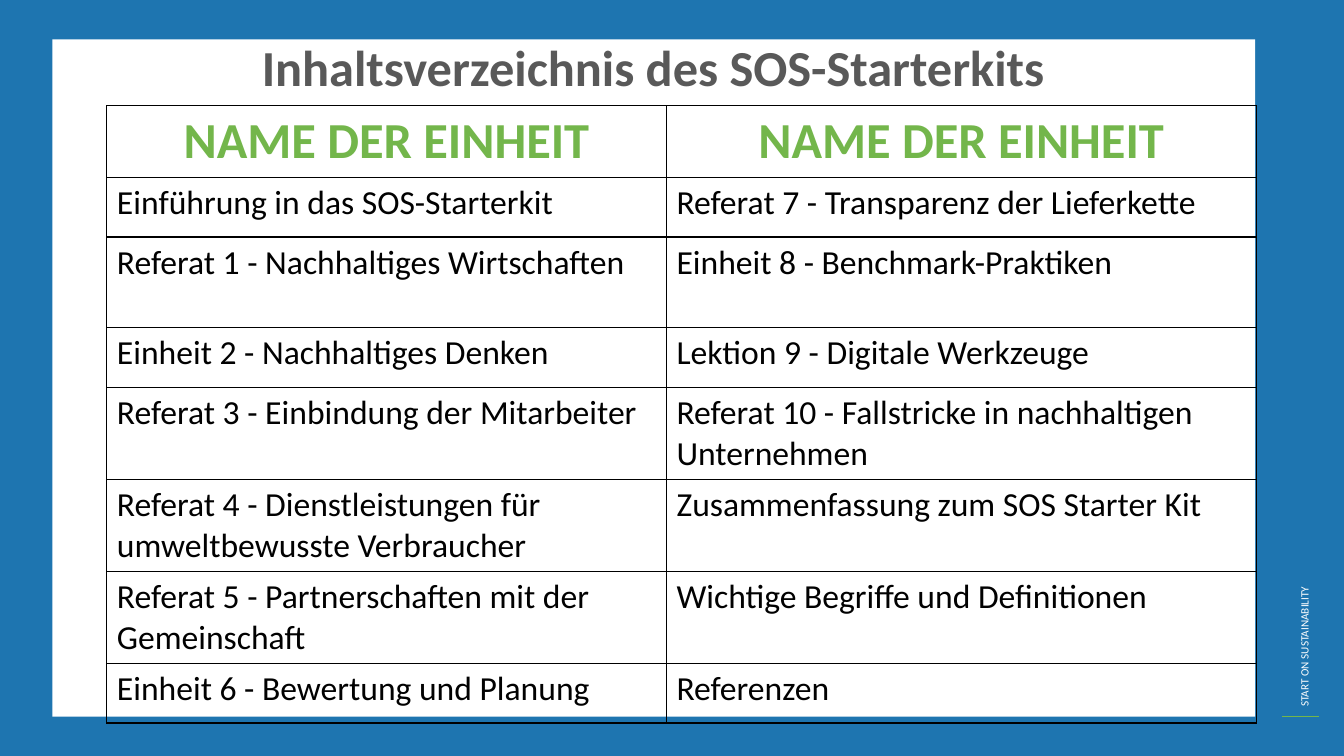
import pptx
import pptx.dml.color
import pptx.enum.shapes
import pptx.enum.text
import pptx.oxml
import pptx.oxml.ns
import pptx.util
from pptx.util import Inches

BLUE, GREEN, WHITE, GREY, BLACK = "1E75B0", "73B64B", "FFFFFF", "595959", "010101"
CENTER = pptx.enum.text.PP_ALIGN.CENTER
LEFT = pptx.enum.text.PP_ALIGN.LEFT

UNITS = [
    ("NAME DER EINHEIT", "NAME DER EINHEIT"),
    ("Einführung in das SOS-Starterkit", "Referat 7 - Transparenz der Lieferkette"),
    ("Referat 1 - Nachhaltiges Wirtschaften", "Einheit 8 - Benchmark-Praktiken"),
    ("Einheit 2 - Nachhaltiges Denken", "Lektion 9 - Digitale Werkzeuge"),
    ("Referat 3 - Einbindung der Mitarbeiter",
     "Referat 10 - Fallstricke in nachhaltigen Unternehmen"),
    ("Referat 4 - Dienstleistungen für umweltbewusste Verbraucher",
     "Zusammenfassung zum SOS Starter Kit"),
    ("Referat 5 - Partnerschaften mit der Gemeinschaft",
     "Wichtige Begriffe und Definitionen"),
    ("Einheit 6 - Bewertung und Planung", "Referenzen"),
]
COL_WIDTHS = [5.55, 5.85]
ROW_HEIGHTS = [0.71, 0.59, 0.9, 0.59, 0.91, 0.91, 0.91, 0.59]


def rgb(value):
    return pptx.dml.color.RGBColor.from_string(value)


class Deck:
    """Holds the font and the current slide."""

    def __init__(self, prs, font="Calibri"):
        self.font = font
        self.s = prs.slides.add_slide(prs.slide_layouts[5])

    def set_text(self, tf, text, size, color, bold=False, align=LEFT):
        tf.text = text
        p = tf.paragraphs[0]
        p.alignment = align
        f = p.runs[0].font
        f.name, f.size, f.bold = self.font, pptx.util.Pt(size), bold
        f.color.rgb = rgb(color)
        return p

    def rect(self, x, y, w, h, fill):
        sp = self.s.shapes.add_shape(pptx.enum.shapes.MSO_SHAPE.RECTANGLE,
                                     Inches(x), Inches(y), Inches(w), Inches(h))
        sp.shadow.inherit = False
        sp.fill.solid()
        sp.fill.fore_color.rgb = rgb(fill)
        sp.line.fill.background()

    def label(self, text, x, y, w, h, size, color, rotation=0):
        sp = self.s.shapes.add_textbox(Inches(x), Inches(y), Inches(w), Inches(h))
        sp.rotation = rotation
        sp.text_frame.word_wrap = True
        self.set_text(sp.text_frame, text, size, color)

    def rule(self, x1, x2, y, color):
        line = self.s.shapes.add_connector(pptx.enum.shapes.MSO_CONNECTOR.STRAIGHT,
                                           Inches(x1), Inches(y), Inches(x2), Inches(y))
        line.line.color.rgb = rgb(color)
        line.line.width = pptx.util.Pt(1)
        line._element.spPr.append(pptx.oxml.parse_xml(
            f'<a:effectLst {pptx.oxml.ns.nsdecls("a")}/>'))

    def title(self, text, x, y, w, h):
        """Fill the title placeholder and bring it in front of the panels."""
        sp = self.s.shapes.title
        sp.left, sp.top, sp.width, sp.height = Inches(x), Inches(y), Inches(w), Inches(h)
        tf = sp.text_frame
        tf.word_wrap = True
        tf.auto_size = pptx.enum.text.MSO_AUTO_SIZE.NONE
        tf.vertical_anchor = pptx.enum.text.MSO_ANCHOR.TOP
        p = self.set_text(tf, text, 36, GREY, True, CENTER)
        p.line_spacing = 0.9
        p.space_before = pptx.util.Pt(10)
        sp._element.getparent().append(sp._element)

    def border(self, cell):
        tcPr = cell._tc.get_or_add_tcPr()
        for i, side in enumerate(("lnL", "lnR", "lnT", "lnB")):
            tcPr.insert(i, pptx.oxml.parse_xml(
                f'<a:{side} {pptx.oxml.ns.nsdecls("a")} w="12700"><a:solidFill>'
                f'<a:srgbClr val="000000"/></a:solidFill></a:{side}>'))

    def table(self, rows, x, y, widths, heights):
        tbl = self.s.shapes.add_table(len(rows), len(widths), Inches(x), Inches(y),
                                      Inches(sum(widths)), Inches(sum(heights))).table
        tbl.horz_banding = False
        for col, w in zip(tbl.columns, widths):
            col.width = Inches(w)
        for i, (row, h) in enumerate(zip(rows, heights)):
            tbl.rows[i].height = Inches(h)
            style = (36, GREEN, True, CENTER) if i == 0 else (24, BLACK)
            for j, text in enumerate(row):
                cell = tbl.cell(i, j)
                cell.fill.background()
                self.set_text(cell.text_frame, text, *style)
                self.border(cell)


def main():
    prs = pptx.Presentation()
    prs.slide_width, prs.slide_height = Inches(13.33), Inches(7.5)
    deck = Deck(prs)
    deck.rect(0, 0, 13.33, 7.5, BLUE)
    deck.rect(0.52, 0.39, 11.93, 6.72, WHITE)
    deck.label("START ON SUSTAINABILITY", 10.71, 4.76, 4.46, 0.24, 8, WHITE, 270)
    deck.rule(12.72, 13.08, 7.11, GREEN)
    deck.title("Inhaltsverzeichnis des SOS-Starterkits", 1.44, 0.38, 10.08, 0.67)
    deck.table(UNITS, 1.06, 1.05, COL_WIDTHS, ROW_HEIGHTS)
    prs.save("out.pptx")


if __name__ == "__main__":
    main()
